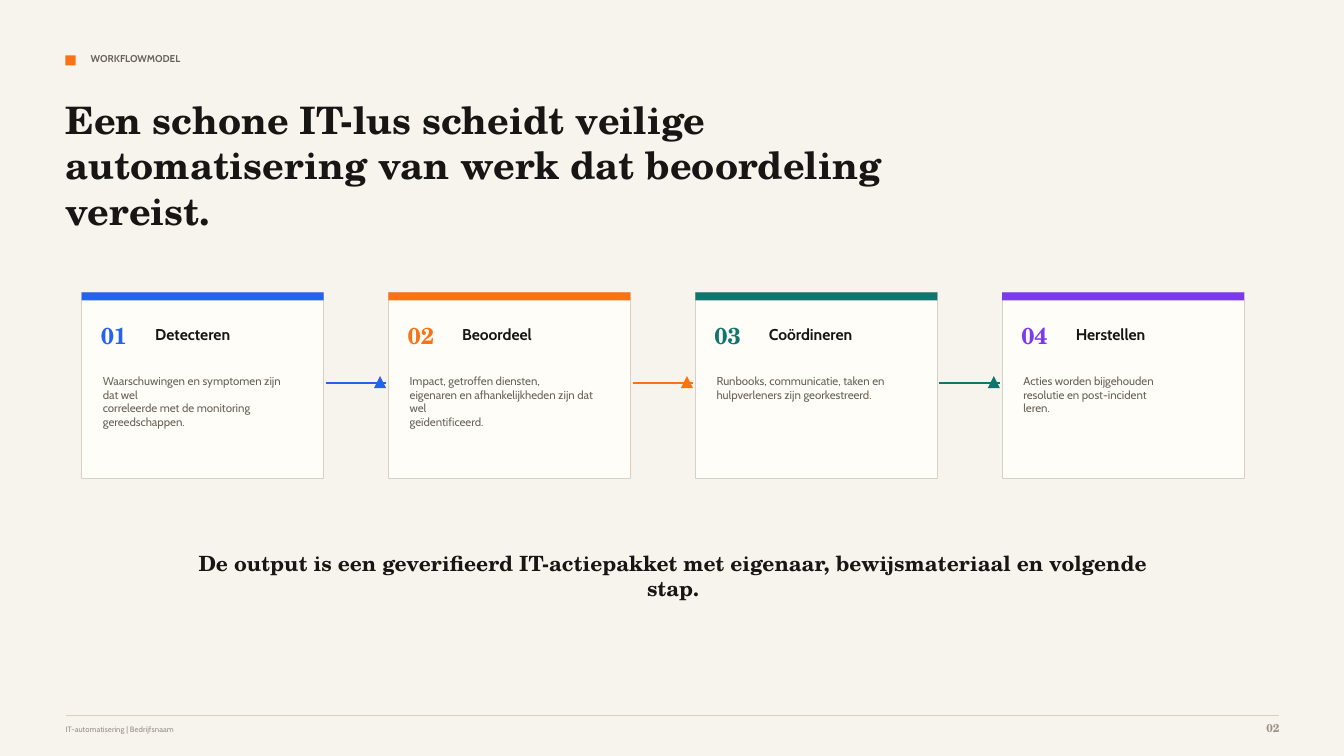
from pptx import Presentation
from pptx.dml.color import RGBColor
from pptx.enum.shapes import MSO_CONNECTOR, MSO_SHAPE as SHAPE
from pptx.enum.text import MSO_ANCHOR, MSO_AUTO_SIZE, PP_ALIGN as ALIGN
from pptx.oxml import parse_xml
from pptx.oxml.ns import nsdecls
from pptx.util import Inches, Pt

SERIF, SANS = "TeX Gyre Schola", "Cabin"
INK, GREY, PALE, RULE = "171614", "69635A", "9A9184", "D9D0C3"
BLUE, ORANGE, GREEN, PURPLE = "2563EB", "F97316", "0F766E", "7C3AED"
rgb = RGBColor.from_string

deck = Presentation()
deck.slide_width, deck.slide_height = Inches(13.33), Inches(7.5)
slide = deck.slides.add_slide(deck.slide_layouts[5])
slide.background.fill.solid()
slide.background.fill.fore_color.rgb = rgb("F7F4EE")
shapes = slide.shapes


def draw(kind, x, y, w, h, color, edge=None):
    """Add a filled preset shape, or a straight line if kind is None."""
    if kind is None:
        item = shapes.add_connector(MSO_CONNECTOR.STRAIGHT, Inches(x), Inches(y),
                                    Inches(x + w), Inches(y))
        item.line.color.rgb = rgb(color)
        item.line.width = Inches(h)
        item._element.spPr.append(parse_xml(f"<a:effectLst {nsdecls('a')}/>"))
        return
    item = shapes.add_shape(kind, Inches(x), Inches(y), Inches(w), Inches(h))
    item.shadow.inherit = False
    item.fill.solid()
    item.fill.fore_color.rgb = rgb(color)
    if edge:
        item.line.color.rgb = rgb(edge)
        item.line.width = Pt(0.75)
    else:
        item.line.fill.background()


def write(text, x, y, w, h, size, font, color, bold=True, align=ALIGN.LEFT, box=None):
    """Fill the given box, or a new text box, one paragraph per line."""
    if box is None:
        box = shapes.add_textbox(0, 0, 0, 0)
    box.left, box.top, box.width, box.height = map(Inches, (x, y, w, h))
    frame = box.text_frame
    frame.margin_left = frame.margin_right = frame.margin_top = frame.margin_bottom = 0
    frame.word_wrap = True
    frame.auto_size = MSO_AUTO_SIZE.NONE
    frame.vertical_anchor = MSO_ANCHOR.TOP
    frame.text = text
    for para in frame.paragraphs:
        para.alignment = align
        para.font.name, para.font.size, para.font.bold = font, Pt(size), bold
        para.font.color.rgb = rgb(color)


# Heading
draw(SHAPE.RECTANGLE, 0.65, 0.55, 0.1, 0.1, ORANGE)
write("WORKFLOWMODEL", 0.9, 0.52, 6.46, 0.19, 7.1, SANS, GREY)
write("Een schone IT-lus scheidt veilige automatisering van werk dat beoordeling vereist.",
      0.65, 0.96, 9.38, 1.08, 27, SERIF, INK, box=shapes.title)

# Step cards
steps = [
    ("Detecteren", BLUE, "Waarschuwingen en symptomen zijn dat wel\n"
     "correleerde met de monitoring\ngereedschappen."),
    ("Beoordeel", ORANGE, "Impact, getroffen diensten,\n"
     "eigenaren en afhankelijkheden zijn dat wel\ngeïdentificeerd."),
    ("Coördineren", GREEN, "Runbooks, communicatie, taken en\n"
     "hulpverleners zijn georkestreerd."),
    ("Herstellen", PURPLE, "Acties worden bijgehouden\nresolutie en post-incident\nleren."),
]
pitch = 9.13 / (len(steps) - 1)
for i, (name, color, body) in enumerate(steps):
    x = 0.81 + i * pitch
    draw(SHAPE.RECTANGLE, x, 2.9, 2.4, 1.85, "FFFDF8", RULE)
    draw(SHAPE.RECTANGLE, x, 2.9, 2.4, 0.08, color)
    write(f"{i + 1:02}", x + 0.19, 3.19, 0.46, 0.29, 16.5, SERIF, color)
    write(name, x + 0.73, 3.22, 1.33, 0.21, 11.2, SANS, INK)
    write(body, x + 0.21, 3.71, 1.92, 0.71, 8.2, SANS, GREY, bold=False)
    if i < len(steps) - 1:
        draw(None, x + 2.42, 3.8, 0.6, 0.02, color)
        draw(SHAPE.ISOSCELES_TRIANGLE, x + 2.9, 3.73, 0.12, 0.12, color)

# Conclusion and footer
write("De output is een geverifieerd IT-actiepakket met eigenaar, bewijsmateriaal en volgende stap.",
      1.83, 5.46, 9.69, 0.44, 15, SERIF, INK, align=ALIGN.CENTER)
draw(None, 0.65, 7.1, 12.04, 0.01, RULE)
write("IT-automatisering | Bedrijfsnaam", 0.65, 7.19, 7.92, 0.15, 5.6, SANS, PALE, bold=False)
write("02", 12.19, 7.15, 0.5, 0.19, 8.2, SERIF, PALE, align=ALIGN.RIGHT)

deck.save("out.pptx")
